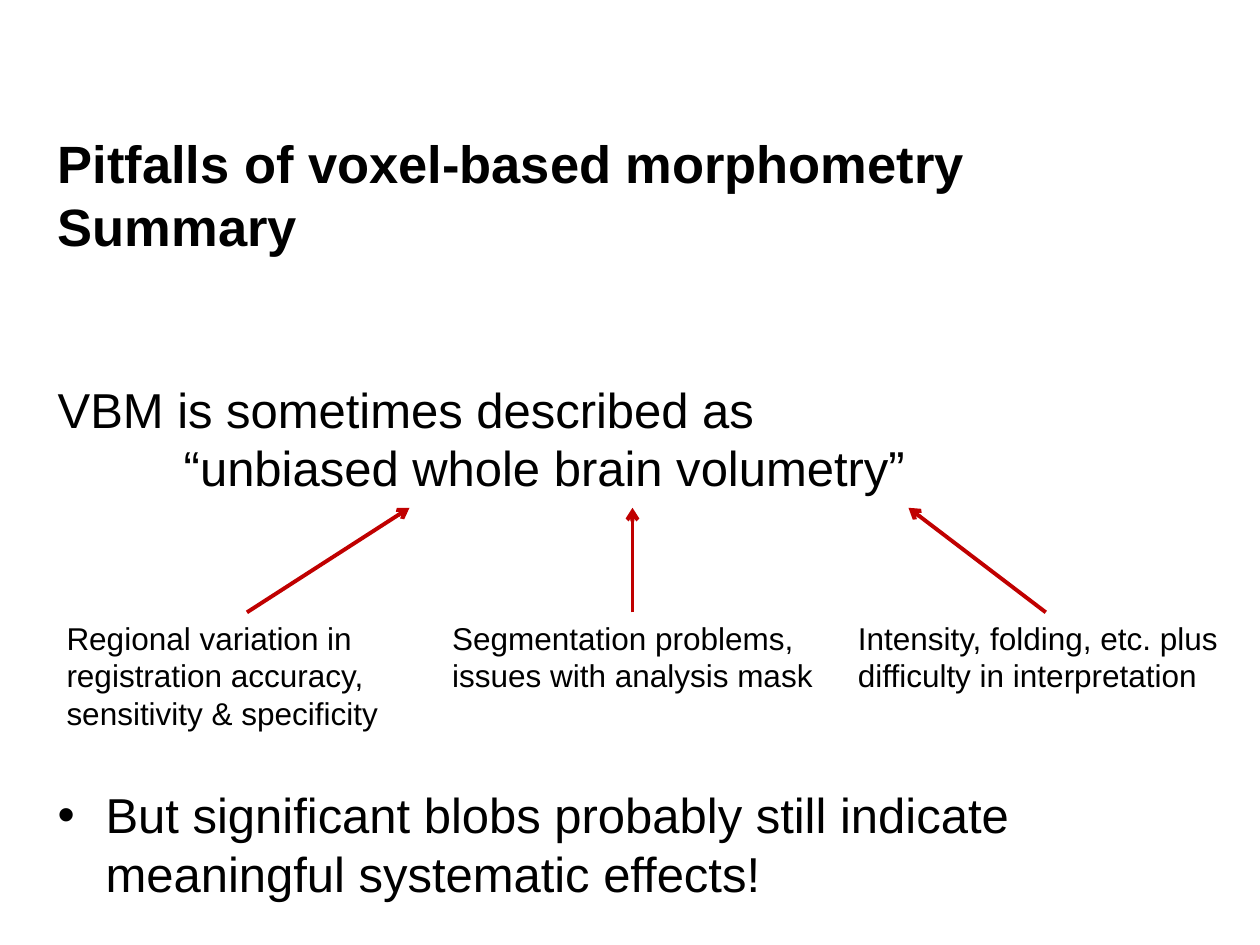
from lxml import etree
from pptx import Presentation
from pptx.dml.color import RGBColor
from pptx.enum.shapes import MSO_CONNECTOR
from pptx.enum.text import MSO_ANCHOR
from pptx.oxml.ns import qn
from pptx.util import Inches, Pt

STRAIGHT = MSO_CONNECTOR.STRAIGHT
TOP = MSO_ANCHOR.TOP
BLACK = RGBColor(0x00, 0x00, 0x00)
RED = RGBColor(0xC0, 0x00, 0x00)
FONT = "Arial"

MARGIN, CONTENT_WIDTH = 0.36, 9.28
ARROW_TOP, NOTE_TOP = 4.03, 4.86
BULLET_INDENT = 0.38

# Note text, left, width, height, arrow start x, arrow end x
NOTES = [
    ("Regional variation in registration accuracy, sensitivity & specificity",
     0.43, 3.06, 1.01, 1.96, 3.25),
    ("Segmentation problems, issues with analysis mask",
     3.49, 3.06, 0.71, 5.02, 5.02),
    ("Intensity, folding, etc. plus difficulty in interpretation",
     6.71, 3.18, 0.71, 8.3, 7.21),
]


class SlideBuilder:
    def __init__(self, page):
        self.page = page

    def text(self, words, left, top, width, height, size, bold=False, bullet=False):
        box = self.page.shapes.add_textbox(
            Inches(left), Inches(top), Inches(width), Inches(height))
        frame = box.text_frame
        frame.word_wrap = True
        frame.vertical_anchor = TOP
        para = frame.paragraphs[0]
        para.text = words
        if bullet:
            properties = para._p.get_or_add_pPr()
            properties.set("marL", str(Inches(BULLET_INDENT)))
            properties.set("indent", str(-Inches(BULLET_INDENT)))
            etree.SubElement(properties, qn("a:buFont"), typeface=FONT)
            etree.SubElement(properties, qn("a:buChar"), char="•")
        para.font.name = FONT
        para.font.size = Pt(size)
        para.font.bold = bold
        para.font.color.rgb = BLACK

    def arrow(self, start_x, start_y, end_x, end_y):
        connector = self.page.shapes.add_connector(
            STRAIGHT, Inches(start_x), Inches(start_y), Inches(end_x), Inches(end_y))
        connector.line.color.rgb = RED
        connector.line.width = Pt(2.25)
        etree.SubElement(connector.line._get_or_add_ln(), qn("a:tailEnd"), type="arrow")
        etree.SubElement(connector._element.spPr, qn("a:effectLst"))


def main():
    deck = Presentation()
    deck.slide_width, deck.slide_height = Inches(10), Inches(7.5)
    builder = SlideBuilder(deck.slides.add_slide(deck.slide_layouts[6]))

    builder.text("Pitfalls of voxel-based morphometry\vSummary",
                 MARGIN, 0.99, CONTENT_WIDTH, 1.42, 30, bold=True)
    builder.text("VBM is sometimes described as\v\t\t“unbiased whole brain volumetry”",
                 MARGIN, 2.96, CONTENT_WIDTH, 1.49, 28)
    for words, left, width, height, start_x, end_x in NOTES:
        builder.text(words, left, NOTE_TOP, width, height, 18)
        builder.arrow(start_x, NOTE_TOP, end_x, ARROW_TOP)
    builder.text("But significant blobs probably still indicate meaningful systematic effects!",
                 MARGIN, 6.18, CONTENT_WIDTH, 1.32, 28, bullet=True)
    deck.save("out.pptx")


if __name__ == "__main__":
    main()
